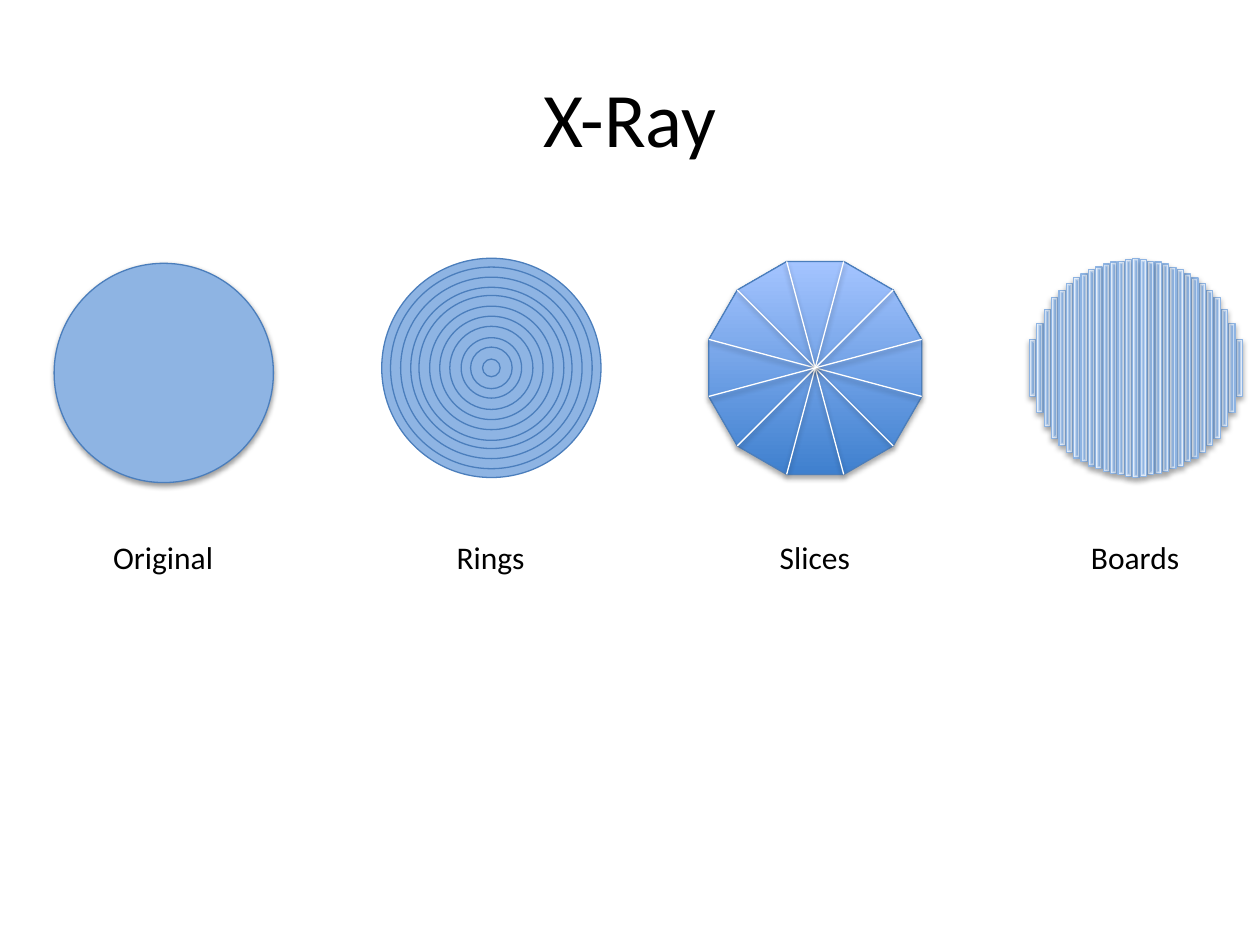
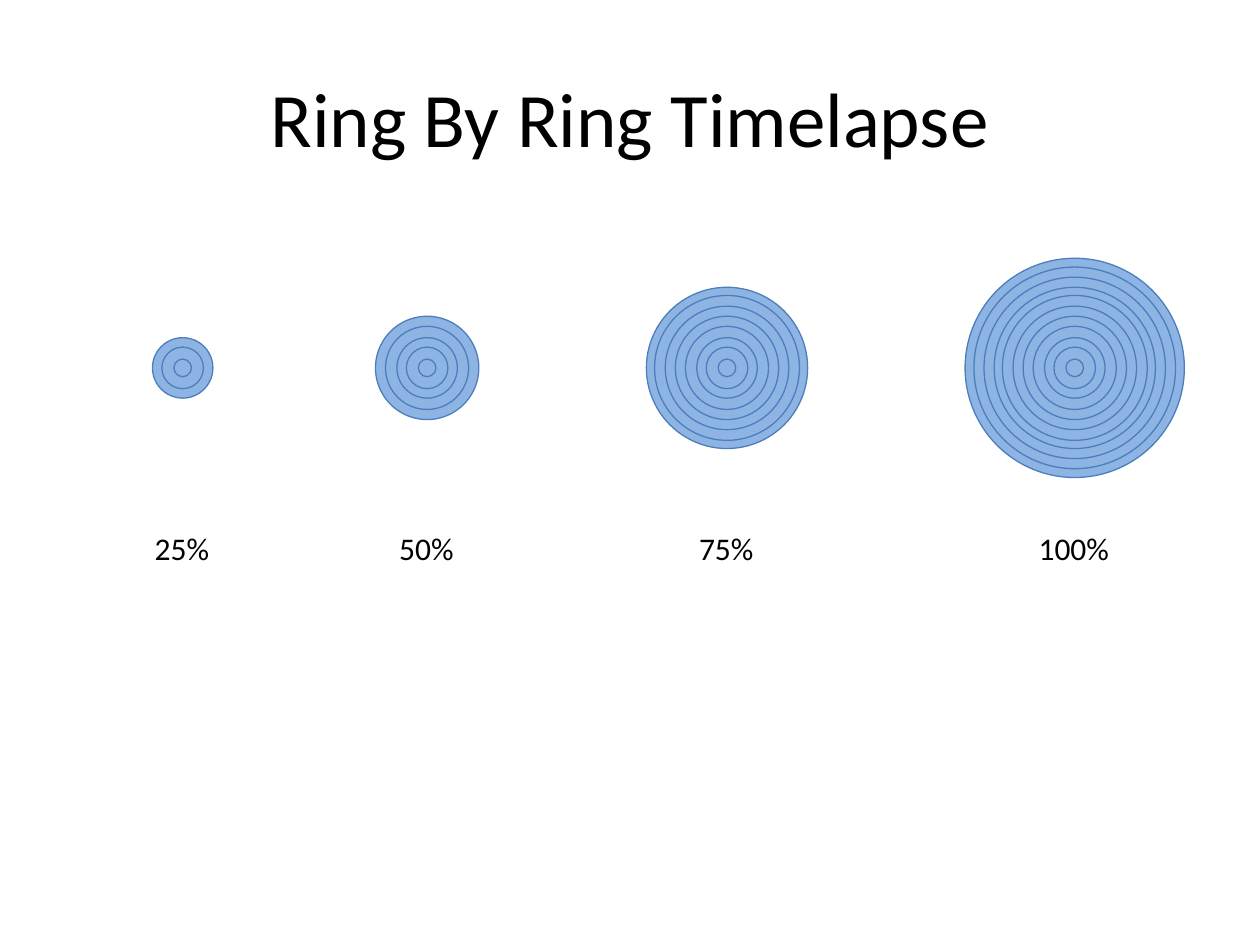
from math import cos, radians, sin

from lxml import etree
from pptx import Presentation
from pptx.dml.color import RGBColor
from pptx.enum.shapes import MSO_CONNECTOR, MSO_SHAPE
from pptx.enum.text import MSO_ANCHOR, MSO_AUTO_SIZE, PP_ALIGN
from pptx.oxml import parse_xml
from pptx.oxml.ns import nsdecls, qn
from pptx.util import Inches, Pt

ELLIPSE = MSO_SHAPE.OVAL
DODECAGON = MSO_SHAPE.DODECAGON
RECTANGLE = MSO_SHAPE.RECTANGLE
STRAIGHT = MSO_CONNECTOR.STRAIGHT
MIDDLE = MSO_ANCHOR.MIDDLE
CENTER = PP_ALIGN.CENTER
FIT_SHAPE = MSO_AUTO_SIZE.SHAPE_TO_FIT_TEXT

COLORS = {
    "text": "000000",
    "shadow": "000000",
    "white": "FFFFFF",
    "disc": "8EB4E3",
    "outline": "4B7EBC",
    "slice_dark": "3F80CE",
    "slice_light": "A4C4FF",
}
FONT = "Calibri"
MIDDLE_Y = 2.92
DIAMETERS = [1.74, 1.6, 1.44, 1.28, 1.15, 0.98, 0.82, 0.66, 0.48, 0.33, 0.14]
BOARD_HEIGHTS = [0.45, 0.71, 0.93, 1.12, 1.23, 1.34, 1.43, 1.49,
                 1.56, 1.6, 1.65, 1.68, 1.69, 1.72, 1.74]
BOARD_WIDTH = 0.05
BOARD_COUNT = 2 * len(BOARD_HEIGHTS) - 1
FIRST_BOARD, LAST_BOARD = 8.17, 9.81
SOFT_SHADOW = (38, 1.6)
DEEP_SHADOW = (35, 1.8)


def color(name):
    return RGBColor.from_string(COLORS[name])


class Deck:
    def __init__(self):
        self.presentation = Presentation()
        self.presentation.slide_width = Inches(10)
        self.presentation.slide_height = Inches(7.5)
        self.slide = None

    def add_slide(self, title):
        self.slide = self.presentation.slides.add_slide(self.presentation.slide_layouts[5])
        shape = self.slide.shapes.title
        shape.left, shape.top = Inches(0.5), Inches(0.3)
        shape.width, shape.height = Inches(9), Inches(1.25)
        shape.text_frame.vertical_anchor = MIDDLE
        self.set_text(shape, title, 44).alignment = CENTER

    def set_text(self, shape, text, size):
        shape.text_frame.text = text
        paragraph = shape.text_frame.paragraphs[0]
        paragraph.font.name = FONT
        paragraph.font.size = Pt(size)
        paragraph.font.color.rgb = color("text")
        return paragraph

    def label(self, text, center, top, width):
        shape = self.slide.shapes.add_textbox(
            Inches(center - width / 2), Inches(top), Inches(width), Inches(0.4))
        shape.text_frame.word_wrap = False
        shape.text_frame.auto_size = FIT_SHAPE
        self.set_text(shape, text, 18)

    def group(self):
        return self.slide.shapes.add_group_shape().shapes

    def finish(self, shape, line, shadow):
        shape.line.color.rgb = color(line)
        shape.line.width = Pt(0.75)
        effects = parse_xml(f"<a:effectLst {nsdecls('a')}/>")
        if shadow:
            opacity, distance = shadow
            outer = etree.SubElement(
                effects, qn("a:outerShdw"), blurRad=str(Pt(3.1)), dist=str(Pt(distance)),
                dir="5400000", rotWithShape="0")
            tint = etree.SubElement(outer, qn("a:srgbClr"), val=COLORS["shadow"])
            etree.SubElement(tint, qn("a:alpha"), val=str(opacity * 1000))
        shape.element.spPr.append(effects)

    def shape(self, shapes, kind, center, middle, width, height, fill, line, shadow=None):
        shape = shapes.add_shape(kind, Inches(center - width / 2), Inches(middle - height / 2),
                                 Inches(width), Inches(height))
        if isinstance(fill, str):
            shape.fill.solid()
            shape.fill.fore_color.rgb = color(fill)
        else:
            shape.fill.gradient()
            shape.fill.gradient_angle = 90
            for stop, name in zip(shape.fill.gradient_stops, fill):
                stop.color.rgb = color(name)
        self.finish(shape, line, shadow)
        return shape

    def disc(self, shapes, center, middle, diameter, shadow=None):
        self.shape(shapes, ELLIPSE, center, middle, diameter, diameter,
                   "disc", "outline", shadow)

    def rings(self, center, diameters):
        shapes = self.group()
        for diameter in diameters:
            self.disc(shapes, center, MIDDLE_Y, diameter)

    def slices(self, center, size):
        shapes = self.group()
        self.shape(shapes, DODECAGON, center, MIDDLE_Y, size, size,
                   ("slice_dark", "slice_light"), "outline", DEEP_SHADOW)
        radius = size / 2 / cos(radians(15))
        for degrees in range(15, 180, 30):
            across = radius * cos(radians(degrees))
            down = radius * sin(radians(degrees))
            connector = shapes.add_connector(
                STRAIGHT, Inches(center - across), Inches(MIDDLE_Y - down),
                Inches(center + across), Inches(MIDDLE_Y + down))
            self.finish(connector, "white", SOFT_SHADOW)

    def board(self, shapes, left, height, rotation):
        shape = self.shape(shapes, RECTANGLE, left + BOARD_WIDTH / 2, MIDDLE_Y, BOARD_WIDTH,
                           height, ("disc", "white"), "disc", DEEP_SHADOW)
        shape.rotation = rotation
        linear = shape.element.spPr.find(".//" + qn("a:lin"))
        linear.getparent().replace(linear, parse_xml(
            f'<a:path {nsdecls("a")} path="shape">'
            '<a:fillToRect l="50000" t="50000" r="50000" b="50000"/></a:path>'))

    def boards(self):
        shapes = self.group()
        step = (LAST_BOARD - FIRST_BOARD) / (BOARD_COUNT - 1)
        for index, height in enumerate(BOARD_HEIGHTS):
            self.board(shapes, FIRST_BOARD + index * step, height, 0)
        for index, height in enumerate(BOARD_HEIGHTS[:-1]):
            self.board(shapes, LAST_BOARD - index * step, height, 180)


def build_x_ray(deck):
    deck.add_slide("X-Ray")
    deck.disc(deck.slide.shapes, 1.3, 2.96, DIAMETERS[0], SOFT_SHADOW)
    deck.slices(6.47, 1.69)
    deck.boards()
    deck.rings(3.9, DIAMETERS)
    for text, center, width in (("Original", 1.3, 1), ("Rings", 3.9, 0.75),
                                ("Slices", 6.47, 0.76), ("Boards", 9.02, 0.92)):
        deck.label(text, center, 4.22, width)


def build_timelapse(deck):
    deck.add_slide("Ring By Ring Timelapse")
    for text, center, ring_count, width in (("25%", 1.45, 3, 0.64), ("50%", 3.39, 5, 0.64),
                                            ("75%", 5.77, 8, 0.64), ("100%", 8.53, 11, 0.77)):
        deck.rings(center, DIAMETERS[-ring_count:])
        deck.label(text, center, 4.15, width)


def main():
    deck = Deck()
    build_x_ray(deck)
    build_timelapse(deck)
    deck.presentation.save("out.pptx")


if __name__ == "__main__":
    main()
